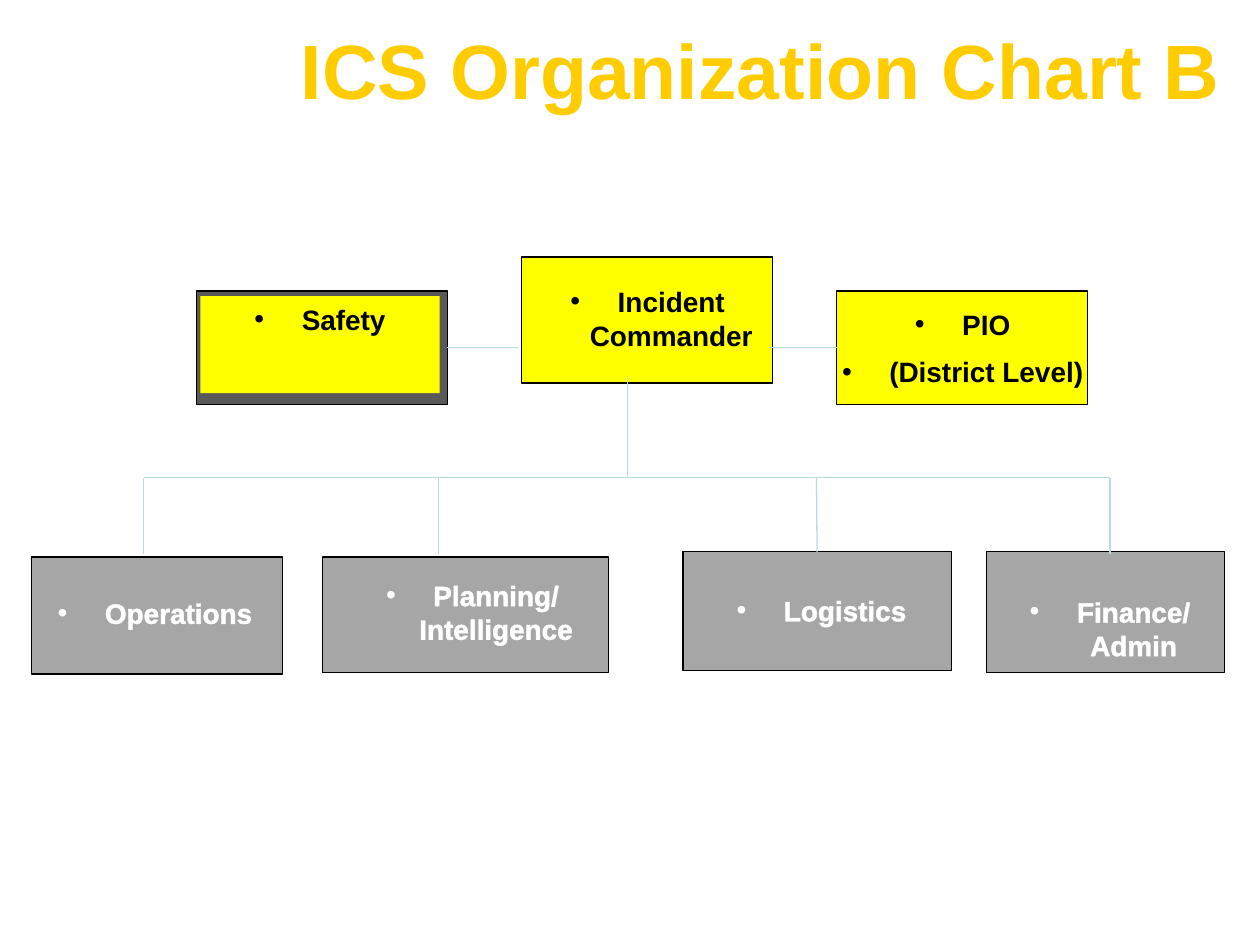
from lxml import etree
from pptx import Presentation
from pptx import util as u
from pptx.dml.color import RGBColor
from pptx.enum import shapes, text
from pptx.oxml import parse_xml
from pptx.oxml.ns import nsdecls, qn

COLORS = {"title": "FFCC00", "yellow": "FFFF00", "dark": "595959", "gray": "A6A6A6",
          "black": "000000", "white": "FFFFFF", "link": "B6DCDF"}
TITLE = "ICS Organization Chart B"
BOXES = {
    "commander": (4.14, 2.04, 1.99, 1, "yellow"),
    "safety": (1.56, 2.31, 1.99, 0.9, "dark"),
    "pio": (6.64, 2.31, 1.99, 0.9, "yellow"),
    "operations": (0.25, 4.42, 1.99, 0.93, "gray"),
    "planning": (2.56, 4.42, 2.27, 0.92, "gray"),
    "logistics": (5.42, 4.38, 2.13, 0.94, "gray"),
    "finance": (7.83, 4.38, 1.89, 0.96, "gray"),
}
LABELS = [
    (["Incident Commander"], 4.05, 2.21, 2.18, 0.64, "black"),
    (["PIO", "(District Level)"], 6.55, 2.39, 2.18, 1.13, "black"),
    (["Operations"], 0.28, 4.68, 1.9, 0.37, "white"),
    (["Planning/ Intelligence"], 2.66, 4.54, 2.18, 0.64, "white"),
    (["Logistics"], 5.57, 4.66, 1.9, 0.37, "white"),
    (["Finance/ Admin"], 7.86, 4.67, 1.9, 0.37, "white"),
]
SAFETY_PANEL = (1.59, 2.35, 1.9, 0.77)
BUS_Y, DROP_Y, STAFF_Y = 3.79, 4.4, 2.76
DROPS = [(1.14, None), (3.48, None), (6.48, "logistics"), (8.81, None)]
INDENT = u.Inches(0.375)


def rgb(name):
    return RGBColor.from_string(COLORS[name])


def add_run(p, words, size, color):
    r = p.add_run()
    r.text = words
    r.font.size, r.font.bold, r.font.name = u.Pt(size), True, "Arial"
    r.font.color.rgb = rgb(color)
    return r


def add_box(s, at, fill, line=None):
    sp = s.shapes.add_shape(shapes.MSO_SHAPE.RECTANGLE, *map(u.Inches, at))
    sp.shadow.inherit = False
    sp.fill.solid()
    sp.fill.fore_color.rgb = rgb(fill)
    if line:
        sp.line.color.rgb, sp.line.width = rgb(line), u.Pt(0.75)
    else:
        sp.line.fill.background()
    return sp


def write_label(sp, lines, color):
    tf = sp.text_frame
    tf.word_wrap, tf.vertical_anchor = True, text.MSO_ANCHOR.TOP
    for i, words in enumerate(lines):
        p = tf.add_paragraph() if i else tf.paragraphs[0]
        p.alignment = text.PP_ALIGN.CENTER
        p.space_before = u.Pt(8 if i else 0)
        pr = p._p.get_or_add_pPr()
        pr.set("marL", str(INDENT))
        pr.set("indent", str(-INDENT))
        etree.SubElement(pr, qn("a:buFont"), typeface="Arial")
        etree.SubElement(pr, qn("a:buChar"), char="•")
        r = add_run(p, words, 16, color)
        if color == "white":
            r.font._element.insert(0, parse_xml(
                f'<a:ln {nsdecls("a")} w="{u.Pt(1.45)}"><a:solidFill>'
                f'<a:srgbClr val="{COLORS[color]}"/></a:solidFill></a:ln>'))


def add_link(s, x1, y1, x2, y2):
    c = s.shapes.add_connector(shapes.MSO_CONNECTOR.STRAIGHT, *map(u.Inches, (x1, y1, x2, y2)))
    c.line.color.rgb, c.line.width = rgb("link"), u.Pt(0.75)
    etree.SubElement(c._element.spPr, qn("a:effectLst"))
    return c


def add_title(s):
    sp = s.shapes.title
    sp.left, sp.top, sp.width, sp.height = map(u.Inches, (2.25, 0.17, 7.58, 1))
    tf = sp.text_frame
    tf.word_wrap, tf.vertical_anchor = True, text.MSO_ANCHOR.MIDDLE
    tf.margin_left = tf.margin_right = tf.margin_top = tf.margin_bottom = u.Inches(0.03)
    p = tf.paragraphs[0]
    p.alignment, p.line_spacing = text.PP_ALIGN.CENTER, u.Pt(35)
    r = add_run(p, TITLE, 44, "title")
    r.font._element.find(qn("a:solidFill")).addnext(parse_xml(
        f'<a:effectLst {nsdecls("a")}><a:outerShdw dist="{u.Pt(2.8)}" dir="2700000">'
        f'<a:srgbClr val="{COLORS["black"]}"/></a:outerShdw></a:effectLst>'))


def main():
    """Build the incident command organization chart slide."""
    prs = Presentation()
    prs.slide_width, prs.slide_height = u.Inches(10), u.Inches(7.5)
    s = prs.slides.add_slide(prs.slide_layouts[5])
    add_title(s)
    boxes = {name: add_box(s, at, fill, "black") for name, (*at, fill) in BOXES.items()}
    write_label(add_box(s, SAFETY_PANEL, "yellow"), ["Safety"], "black")
    for lines, *at, color in LABELS:
        sp = s.shapes.add_textbox(*map(u.Inches, at))
        write_label(sp, lines, color)
        sp.text_frame.auto_size = text.MSO_AUTO_SIZE.SHAPE_TO_FIT_TEXT

    add_link(s, 4.98, 2.99, 4.98, BUS_Y)
    add_link(s, DROPS[0][0], BUS_Y, DROPS[-1][0], BUS_Y)
    for x, name in DROPS:
        drop = add_link(s, x, DROP_Y, x, BUS_Y)
        if name:
            drop.begin_connect(boxes[name], 0)
    add_link(s, 3.54, STAFF_Y, 4.11, STAFF_Y).begin_connect(boxes["safety"], 3)
    add_link(s, 6.1, STAFF_Y, 6.67, STAFF_Y).end_connect(boxes["pio"], 1)
    prs.save("out.pptx")


if __name__ == "__main__":
    main()
